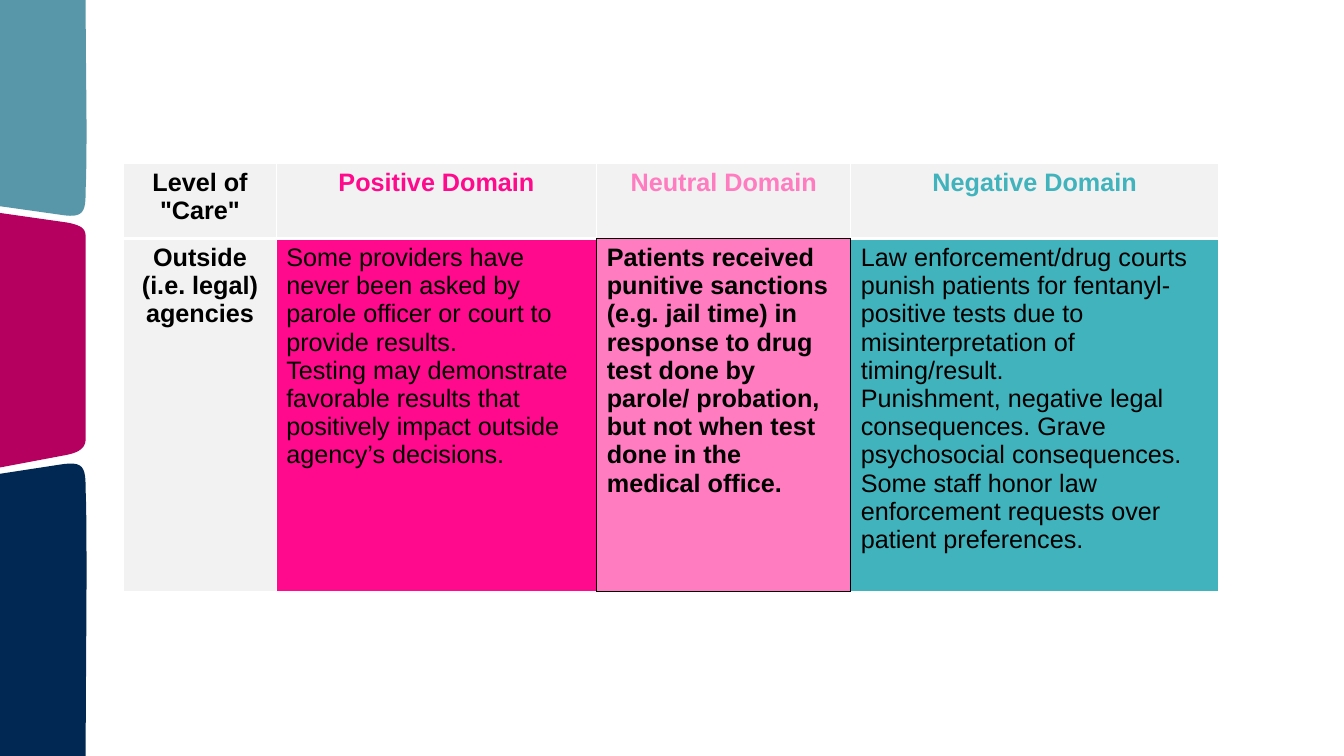
"""Build a slide with a table of testing outcomes beside a coloured side band."""
from lxml import etree
from pptx import Presentation
from pptx import util as u
from pptx.dml.color import RGBColor
from pptx.enum import text
from pptx.oxml.ns import qn

THEME = {
    "font": "Arial", "size": 18,
    "black": "000000", "white": "FFFFFF", "grey": "F2F2F2",
    "positive": "FF0A8C", "neutral": "FF7CC1", "negative": "41B3BC",
    "sky": "5797A9", "berry": "B60060", "navy": "002853",
}

HEADINGS = [
    ('Level of "Care"', "black"),
    ("Positive Domain", "positive"),
    ("Neutral Domain", "neutral"),
    ("Negative Domain", "negative"),
]
FINDINGS = [
    (["Outside (i.e. legal) agencies"], "grey", True),
    (["Some providers have never been asked by parole officer or court to provide results.",
      "Testing may demonstrate favorable results that positively impact outside agency’s decisions."],
     "positive", False),
    (["Patients received punitive sanctions (e.g. jail time) in response to drug test done "
      "by parole/ probation, but not when test done in the medical office."],
     "neutral", True),
    (["Law enforcement/drug courts punish patients for fentanyl-positive tests due to "
      "misinterpretation of timing/result.",
      "Punishment, negative legal consequences. Grave psychosocial consequences.",
      "Some staff honor law enforcement requests over patient preferences."],
     "negative", False),
]
TABLE_LEFT, TABLE_TOP = 3.12, 4.11
COLUMN_WIDTHS = [3.84, 8.08, 6.4, 9.27]
ROW_HEIGHTS = [1.9, 8.89]
NEUTRAL_CELL = (1, 2)

# Each step is an end point, or two control points followed by an end point.
SIDE_BAND = [
    ("berry", [(-0.03, 5.99), (-0.03, 5.79, -0.05, 5.64, -0.05, 5.36), (1.7, 5.61),
               (2.11, 5.69, 2.16, 5.79, 2.16, 5.99), (2.16, 11.05),
               (2.16, 11.23, 2.08, 11.38, 1.7, 11.46), (-0.05, 11.79),
               (-0.05, 11.51, 0, 11.23, 0, 11.05)]),
    ("sky", [(-0.13, 5.18), (1.5, 5.41), (2.11, 5.51, 2.16, 5.36, 2.16, 4.8),
             (2.21, 3.56, 2.16, 1.85, 2.16, -0.03), (-0.03, -0.03)]),
    ("navy", [(0, 11.94), (1.5, 11.71), (2.11, 11.61, 2.16, 11.76, 2.16, 12.34),
              (2.21, 13.56, 2.16, 17.22, 2.16, 19.08), (0, 19.08)]),
]
CURVE_STEPS = 12


def color(name):
    return RGBColor.from_string(THEME[name])


def outline(steps):
    points = [steps[0]]
    for step in steps[1:]:
        if len(step) == 2:
            points.append(step)
            continue
        start = points[-1]
        for index in range(1, CURVE_STEPS + 1):
            t = index / CURVE_STEPS
            s = 1 - t
            points.append(tuple(
                s**3 * start[axis] + 3 * s * s * t * step[axis]
                + 3 * s * t * t * step[2 + axis] + t**3 * step[4 + axis]
                for axis in (0, 1)))
    return [(u.Cm(x), u.Cm(y)) for x, y in points]


def add_band_piece(page, fill, steps):
    points = outline(steps)
    builder = page.shapes.build_freeform(*points[0], scale=1.0)
    builder.add_line_segments(points[1:], close=True)
    piece = builder.convert_to_shape()
    piece.shadow.inherit = False
    piece.fill.solid()
    piece.fill.fore_color.rgb = color(fill)
    piece.line.fill.background()


def cell_borders(row, column):
    sides = {"L": (0, -1), "R": (0, 1), "T": (-1, 0), "B": (1, 0)}
    for side, (down, across) in sides.items():
        neighbour = (row + down, column + across)
        if NEUTRAL_CELL in ((row, column), neighbour):
            yield side, "black", 1
        else:
            yield side, "white", 3 if (row, side) == (0, "B") else 1


def style_cell(cell, row, column, fill):
    properties = cell._tc.get_or_add_tcPr()
    for side, name, width in cell_borders(row, column):
        line = etree.SubElement(properties, qn(f"a:ln{side}"), w=str(u.Pt(width)))
        solid = etree.SubElement(line, qn("a:solidFill"))
        etree.SubElement(solid, qn("a:srgbClr"), val=THEME[name])
    cell.fill.solid()
    cell.fill.fore_color.rgb = color(fill)


def write_cell(cell, lines, ink, bold, align):
    cell.text = "\n".join(lines)
    for para in cell.text_frame.paragraphs:
        para.alignment = align
        for span in para.runs:
            formats = {"name": THEME["font"], "size": u.Pt(THEME["size"]), "bold": bold}
            for key, value in formats.items():
                setattr(span.font, key, value)
            span.font.color.rgb = color(ink)


def add_outcomes(page):
    frame = page.shapes.add_table(
        len(ROW_HEIGHTS), len(COLUMN_WIDTHS), u.Cm(TABLE_LEFT), u.Cm(TABLE_TOP),
        u.Cm(sum(COLUMN_WIDTHS)), u.Cm(sum(ROW_HEIGHTS)))
    table = frame.table
    table.horz_banding = False
    for column, width in zip(table.columns, COLUMN_WIDTHS):
        column.width = u.Cm(width)
    for row, height in zip(table.rows, ROW_HEIGHTS):
        row.height = u.Cm(height)
    centre, left = text.PP_ALIGN.CENTER, text.PP_ALIGN.LEFT
    for index, (heading, ink) in enumerate(HEADINGS):
        cell = table.cell(0, index)
        style_cell(cell, 0, index, "grey")
        write_cell(cell, [heading], ink, True, centre)
    for index, (lines, fill, bold) in enumerate(FINDINGS):
        cell = table.cell(1, index)
        style_cell(cell, 1, index, fill)
        write_cell(cell, lines, "black", bold, left if index else centre)


def main():
    deck = Presentation()
    deck.slide_width, deck.slide_height = u.Cm(33.87), u.Cm(19.05)
    page = deck.slides.add_slide(deck.slide_layouts[6])
    for fill, steps in SIDE_BAND:
        add_band_piece(page, fill, steps)
    add_outcomes(page)
    deck.save("out.pptx")


if __name__ == "__main__":
    main()
